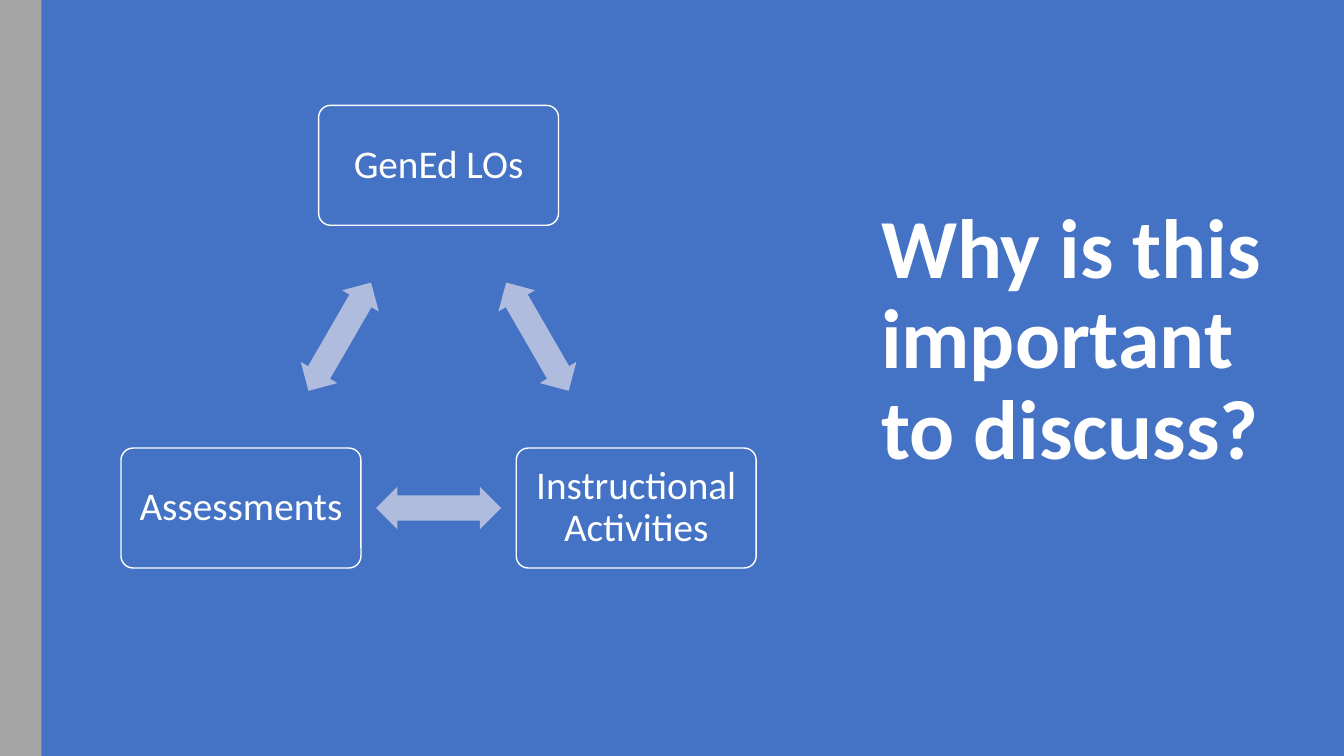
from pptx import Presentation
from pptx.dml.color import RGBColor
from pptx.enum.shapes import MSO_SHAPE as Shape
from pptx.enum.text import MSO_ANCHOR as Anchor, PP_ALIGN as Align
from pptx.util import Inches, Pt

# Content
TITLE = "Why is this important to discuss?"
STEPS = [  # label, centre x, centre y
    ("GenEd LOs", 4.35, 1.64),
    ("Instructional Activities", 6.31, 5.04),
    ("Assessments", 2.39, 5.04),
]
ARROW_ANGLES = [60, 180, 300]  # each arrow leads from a step to the next
COLORS = {"blue": "4472C4", "gray": "A5A5A5", "arrow": "B0BCDE", "white": "FFFFFF"}

SLIDE_SIZE = (13.33, 7.5)
BOX_SIZE = (2.38, 1.19)
ARROW_SIZE = (1.24, 0.42)
STRIPE_WIDTH = 0.41
TITLE_PLACE = (8.64, 1.88, 4.25, 2.91)

deck = Presentation()
deck.slide_width, deck.slide_height = map(Inches, SLIDE_SIZE)
page = deck.slides.add_slide(deck.slide_layouts[6])


def color(name):
    return RGBColor.from_string(COLORS[name])


def add_block(kind, place, fill, line=None):
    block = page.shapes.add_shape(kind, *map(Inches, place))
    block.shadow.inherit = False
    block.fill.solid()
    block.fill.fore_color.rgb = color(fill)
    if line:
        block.line.color.rgb = color(line)
        block.line.width = Pt(1)
    else:
        block.line.fill.background()
    return block


def centered(x, y, size):
    width, height = size
    return x - width / 2, y - height / 2, width, height


def write(shape, text, frame_format, para_format, font_format):
    frame = shape.text_frame
    para = frame.paragraphs[0]
    span = para.add_run()
    span.text = text
    span.font.color.rgb = color("white")
    for target, values in ((frame, frame_format), (para, para_format), (span.font, font_format)):
        for name, value in values.items():
            setattr(target, name, value)


# Background and side stripe
add_block(Shape.RECTANGLE, (0, 0, *SLIDE_SIZE), "blue")
add_block(Shape.RECTANGLE, (0, 0, STRIPE_WIDTH, SLIDE_SIZE[1]), "gray")

# Title
title = page.shapes.add_textbox(*map(Inches, TITLE_PLACE))
write(title, TITLE,
      {"word_wrap": True, "vertical_anchor": Anchor.BOTTOM},
      {"line_spacing": 0.9, "alignment": Align.LEFT},
      {"name": "Calibri", "size": Pt(60), "bold": True})

# Cycle of steps, with an arrow halfway to the next step
BOX_FRAME = {"word_wrap": True, "vertical_anchor": Anchor.MIDDLE}
for side in ("left", "top", "right", "bottom"):
    BOX_FRAME[f"margin_{side}"] = Inches(0.12)

for index, (label, x, y) in enumerate(STEPS):
    box = add_block(Shape.ROUNDED_RECTANGLE, centered(x, y, BOX_SIZE), "blue", "white")
    box.adjustments[0] = 0.1
    write(box, label, BOX_FRAME,
          {"line_spacing": 0.9, "alignment": Align.CENTER},
          {"name": "Calibri", "size": Pt(28)})

    _, next_x, next_y = STEPS[(index + 1) % len(STEPS)]
    middle = centered((x + next_x) / 2, (y + next_y) / 2, ARROW_SIZE)
    arrow = add_block(Shape.LEFT_RIGHT_ARROW, middle, "arrow")
    arrow.adjustments[0] = 0.6
    arrow.adjustments[1] = 0.5
    arrow.rotation = ARROW_ANGLES[index]

deck.save("out.pptx")
